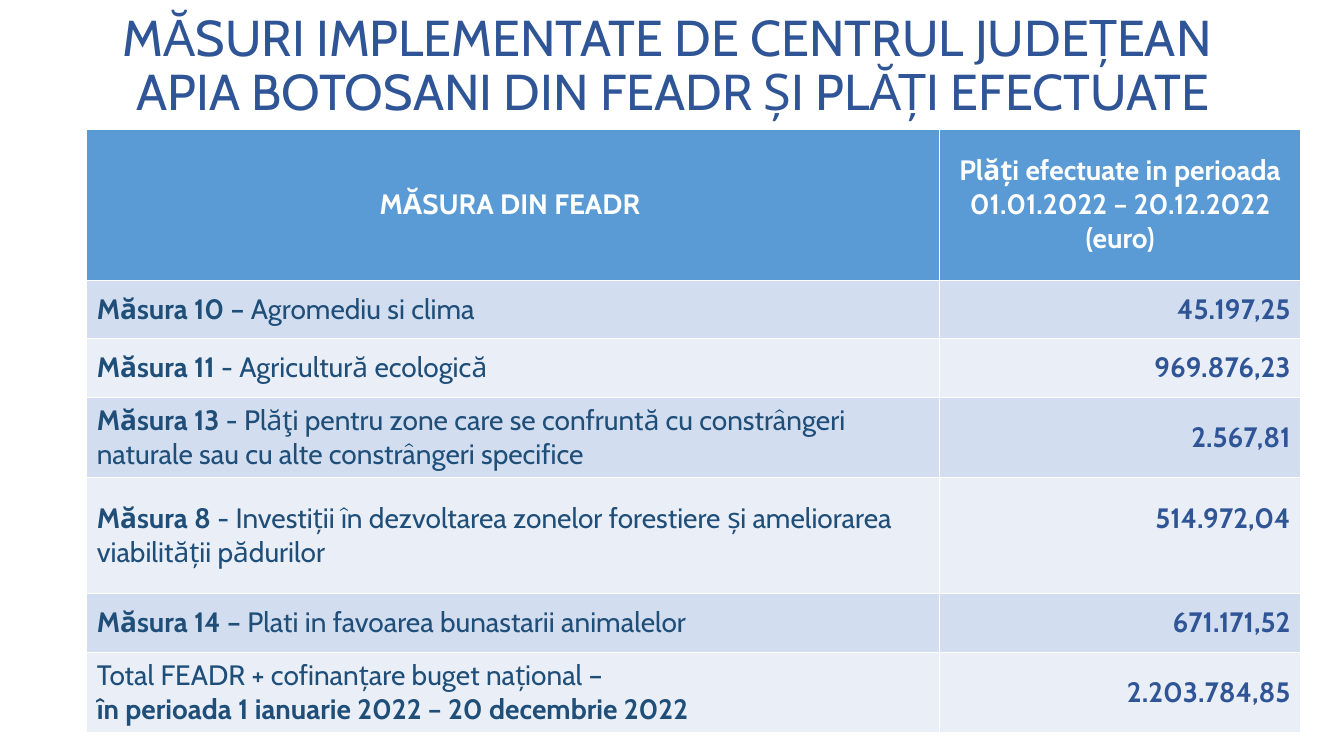
from pptx import Presentation
from pptx.dml.color import RGBColor
from pptx.enum.text import MSO_ANCHOR, MSO_AUTO_SIZE, PP_ALIGN
from pptx.util import Pt

PX = 9144  # EMU per px, 100 px to the inch
LEFT, CENTER, RIGHT = PP_ALIGN.LEFT, PP_ALIGN.CENTER, PP_ALIGN.RIGHT
MIDDLE = MSO_ANCHOR.MIDDLE
NO_AUTOFIT = MSO_AUTO_SIZE.NONE

FONT = "Cabin"
WHITE = RGBColor(0xFF, 0xFF, 0xFF)
TITLE_BLUE = RGBColor(0x2F, 0x55, 0x97)
TEXT_BLUE = RGBColor(0x1F, 0x4E, 0x79)
HEADER_BLUE = RGBColor(0x5B, 0x9B, 0xD5)
BANDS = (RGBColor(0xD2, 0xDE, 0xEF), RGBColor(0xEA, 0xEF, 0xF7))

TITLE = "MĂSURI IMPLEMENTATE DE CENTRUL JUDEȚEAN \vAPIA BOTOSANI DIN FEADR ȘI PLĂȚI EFECTUATE"
HEADERS = ("MĂSURA DIN FEADR ",
           "Plăți efectuate in perioada\v01.01.2022 – 20.12.2022\n(euro)")
COLUMN_WIDTHS = (846, 358)
HEADER_HEIGHT = 150
RAISED = 34  # lifts an amount to the first line of its measure

# Row height, bold part, plain part, amount, lift of the amount
MEASURES = (
    (58, "Măsura 10 – ", "Agromediu si clima", "45.197,25", 0),
    (58, "Măsura 11 ", "- Agricultură ecologică", "969.876,23", 0),
    (80, "Măsura 13", " - Plăţi pentru zone care se confruntă cu constrângeri "
     "naturale sau cu alte constrângeri specifice", "2.567,81", 0),
    (115, "Măsura 8 ", "- Investiții în dezvoltarea zonelor forestiere și "
     "ameliorarea viabilității pădurilor", "514.972,04", RAISED),
    (58, "Măsura 14 – ", "Plati in favoarea bunastarii animalelor", "671.171,52", 0),
)
TOTAL_HEIGHT = 80
TOTAL_LABEL = "Total FEADR + cofinanțare buget național –"
TOTAL_PERIOD = "în perioada 1 ianuarie 2022 – 20 decembrie 2022"
TOTAL_AMOUNT = "2.203.784,85"


def style_paragraph(para, size, color, align, bold=None):
    para.alignment = align
    font = para.font
    font.name, font.size, font.bold = FONT, Pt(size), bold
    font.color.rgb = color


def add_title(page, left, top, width, height):
    title = page.shapes.title
    title.left, title.top = left * PX, top * PX
    title.width, title.height = width * PX, height * PX
    frame = title.text_frame
    frame.text = TITLE
    frame.auto_size = NO_AUTOFIT
    frame.word_wrap = True
    frame.vertical_anchor = MIDDLE
    para = frame.paragraphs[0]
    para.line_spacing = 0.9
    style_paragraph(para, 36, TITLE_BLUE, CENTER)


def fill_cell(cell, paragraphs, fill, color, align):
    """Each paragraph is a list of (text, bold) spans."""
    cell.fill.solid()
    cell.fill.fore_color.rgb = fill
    cell.vertical_anchor = MIDDLE
    frame = cell.text_frame
    for index, spans in enumerate(paragraphs):
        para = frame.add_paragraph() if index else frame.paragraphs[0]
        style_paragraph(para, 20, color, align)
        for text, bold in spans:
            span = para.add_run()
            span.text = text
            span.font.bold = bold


def fill_header(cell, text):
    cell.fill.solid()
    cell.fill.fore_color.rgb = HEADER_BLUE
    cell.vertical_anchor = MIDDLE
    cell.text_frame.text = text
    for para in cell.text_frame.paragraphs:
        style_paragraph(para, 20, WHITE, CENTER, True)


def add_payments_table(page, left, top):
    # Every body row: height, label paragraphs, amount, lift
    rows = [(height, [[(name, True), (detail, False)]], amount, lift)
            for height, name, detail, amount, lift in MEASURES]
    rows.append((TOTAL_HEIGHT, [[(TOTAL_LABEL, False)], [(TOTAL_PERIOD, True)]],
                 TOTAL_AMOUNT, 0))
    heights = [HEADER_HEIGHT] + [row[0] for row in rows]
    table = page.shapes.add_table(
        len(heights), len(COLUMN_WIDTHS), left * PX, top * PX,
        sum(COLUMN_WIDTHS) * PX, sum(heights) * PX).table
    for column, width in zip(table.columns, COLUMN_WIDTHS):
        column.width = width * PX
    for row, height in zip(table.rows, heights):
        row.height = height * PX

    # Header
    for index, text in enumerate(HEADERS):
        fill_header(table.cell(0, index), text)

    # Measures and total
    for index, (_, label, amount, lift) in enumerate(rows):
        band = BANDS[index % 2]
        fill_cell(table.cell(index + 1, 0), label, band, TEXT_BLUE, LEFT)
        amount_cell = table.cell(index + 1, 1)
        fill_cell(amount_cell, [[(amount, True)]], band, TITLE_BLUE, RIGHT)
        amount_cell.margin_bottom += lift * PX


def main():
    deck = Presentation()
    deck.slide_width, deck.slide_height = 1333 * PX, 750 * PX
    page = deck.slides.add_slide(deck.slide_layouts.get_by_name("Title Only"))
    add_title(page, 86, 21, 1163, 91)
    add_payments_table(page, 86, 128)
    deck.save("out.pptx")


if __name__ == "__main__":
    main()
